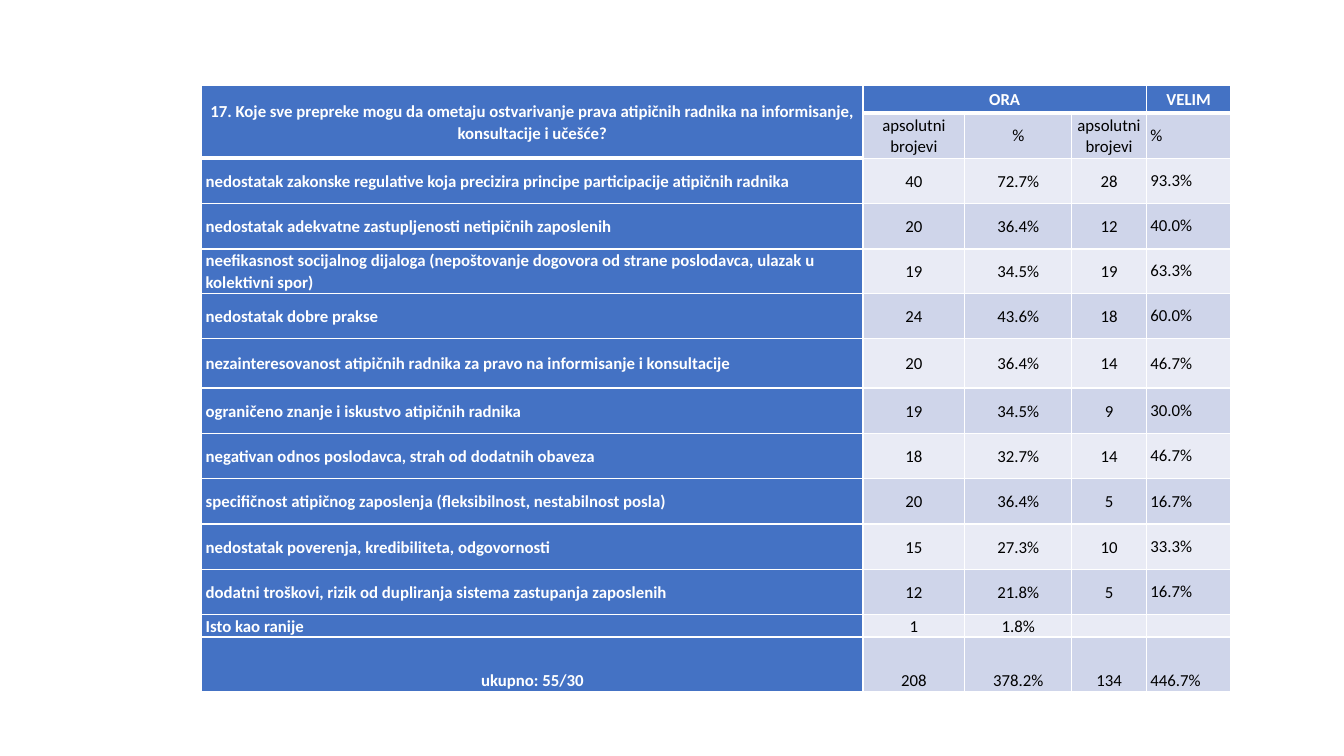
from lxml import etree
from pptx import Presentation
from pptx import util as u
from pptx.dml import color
from pptx.enum import text
from pptx.oxml import ns

PX = 9144
COLORS = {"head": "4472C4", "band": "CFD5EA", "light": "E9EBF5", "white": "FFFFFF", "black": "000000"}
QUESTION = (
    "17. Koje sve prepreke mogu da ometaju ostvarivanje prava atipičnih radnika "
    "na informisanje, konsultacije i učešće?"
)
ANSWERS = [
    ("nedostatak zakonske regulative koja precizira principe participacije atipičnih radnika",
     "40", "72.7%", "28", "93.3%"),
    ("nedostatak adekvatne zastupljenosti netipičnih zaposlenih", "20", "36.4%", "12", "40.0%"),
    ("neefikasnost socijalnog dijaloga (nepoštovanje dogovora od strane poslodavca, ulazak u kolektivni spor)",
     "19", "34.5%", "19", "63.3%"),
    ("nedostatak dobre prakse", "24", "43.6%", "18", "60.0%"),
    ("nezainteresovanost atipičnih radnika za pravo na informisanje i konsultacije",
     "20", "36.4%", "14", "46.7%"),
    ("ograničeno znanje i iskustvo atipičnih radnika", "19", "34.5%", "9", "30.0%"),
    ("negativan odnos poslodavca, strah od dodatnih obaveza", "18", "32.7%", "14", "46.7%"),
    ("specifičnost atipičnog zaposlenja (fleksibilnost, nestabilnost posla)",
     "20", "36.4%", "5", "16.7%"),
    ("nedostatak poverenja, kredibiliteta, odgovornosti", "15", "27.3%", "10", "33.3%"),
    ("dodatni troškovi, rizik od dupliranja sistema zastupanja zaposlenih",
     "12", "21.8%", "5", "16.7%"),
    ("Isto kao ranije", "1", "1.8%", "", ""),
]
TOTAL = ("ukupno: 55/30", "208", "378.2%", "134", "446.7%")
ROWS = [
    (QUESTION, "ORA", "", "", "VELIM"),
    ("", "apsolutni brojevi", "%", "apsolutni brojevi", "%"),
    *ANSWERS,
    TOTAL,
]
COLUMN_WIDTHS = [656, 101, 106, 74, 84]
ROW_HEIGHTS = [27, 45, 45, 45, 44, 45, 49, 45, 45, 45, 45, 45, 22, 54]
MERGES = [((0, 0), (1, 0)), ((0, 1), (0, 3))]


class SurveySlide:
    font = "Calibri"
    size = 12

    def __init__(self, deck):
        self.slide = deck.slides.add_slide(deck.slide_layouts[6])

    def rgb(self, name):
        return color.RGBColor.from_string(COLORS[name])

    def border(self, cell, side, points):
        line = etree.SubElement(cell._tc.get_or_add_tcPr(), ns.qn(f"a:ln{side}"), w=str(u.Pt(points)))
        fill = etree.SubElement(line, ns.qn("a:solidFill"))
        etree.SubElement(fill, ns.qn("a:srgbClr"), val=COLORS["white"])

    def cell(self, cell, words, fill, align, anchor, bold, sides):
        for side, points in sides.items():
            self.border(cell, side, points)
        cell.fill.solid()
        cell.fill.fore_color.rgb = self.rgb(fill)
        cell.margin_left = cell.margin_right = 4 * PX
        cell.margin_top = cell.margin_bottom = 0
        cell.vertical_anchor = anchor
        paragraph = cell.text_frame.paragraphs[0]
        if not words:
            paragraph._p.get_or_add_endParaRPr().set("sz", str(self.size * 100))
            return
        paragraph.alignment = align
        run = paragraph.add_run()
        run.text = words
        run.font.name = self.font
        run.font.size = u.Pt(self.size)
        run.font.bold = bold
        run.font.color.rgb = self.rgb("white" if bold else "black")

    def table(self, left, top, rows, widths, heights, merges):
        frame = self.slide.shapes.add_table(
            len(rows), len(widths), left * PX, top * PX, sum(widths) * PX, sum(heights) * PX)
        table = frame.table
        for column, width in zip(table.columns, widths):
            column.width = width * PX
        for row, height in zip(table.rows, heights):
            row.height = height * PX
        last_row, last_column = len(rows) - 1, len(widths) - 1
        for r, row in enumerate(rows):
            for c, words in enumerate(row):
                header = r == 0 or c == 0
                label = c == 0 and 1 < r < last_row
                percent = c == last_column and r > 0
                fill = "head" if header else "band" if r % 2 else "light"
                align = text.PP_ALIGN.LEFT if label or percent else text.PP_ALIGN.CENTER
                anchor = text.MSO_ANCHOR.BOTTOM if r == last_row else text.MSO_ANCHOR.MIDDLE
                sides = {"L": 1, "R": 1}
                if r == 0:
                    sides["T"] = 1
                sides["B"] = 3 if r == 0 or (r, c) == (1, 0) else 1
                cell = table.cell(r, c)
                self.cell(cell, words, fill, align, anchor, header, sides)
                if words and not percent:
                    cell.text_frame.paragraphs[0].line_spacing = 1.07
        for first, last in merges:
            table.cell(*first).merge(table.cell(*last))


def main():
    deck = Presentation()
    deck.slide_width, deck.slide_height = 1333 * PX, 750 * PX
    survey = SurveySlide(deck)
    survey.table(200, 85, ROWS, COLUMN_WIDTHS, ROW_HEIGHTS, MERGES)
    deck.save("out.pptx")


if __name__ == "__main__":
    main()
